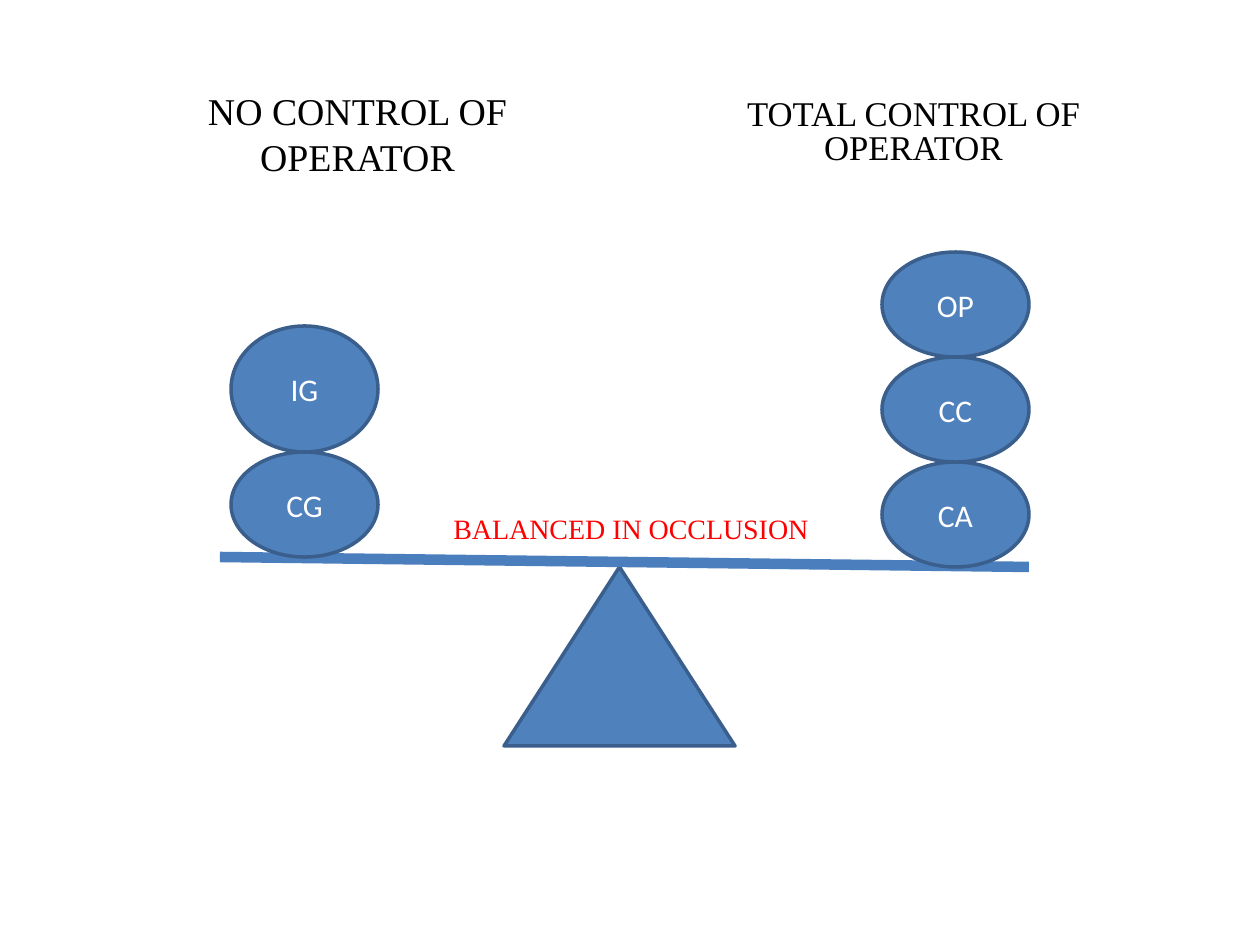
import pptx
import pptx.util
import pptx.dml.color
import pptx.enum.shapes
import pptx.enum.text
import pptx.oxml.ns
import lxml.etree

COLORS = {"fill": "4F81BD", "outline": "3A5F8C", "beam": "4B7EBC",
          "heading": "000000", "caption": "FF0000", "label": "FFFFFF"}
SERIF, SANS = "Times New Roman", "Calibri"
PX = 914400 // 126

LEFT_HEADING = ("NO CONTROL OF OPERATOR", 21.6, (116, 94, 483, 79))
RIGHT_HEADING = ("TOTAL CONTROL OF OPERATOR", 19.8, (672, 94, 483, 79))
CAPTION = ("BALANCED IN OCCLUSION", 16, (441, 505, 384, 47))
BEAM = (220, 557, 1029, 567)
FULCRUM = (504, 567, 231, 179)
WEIGHT_WIDTH = 147
STACKS = [
    {"left": 231, "base": 557, "weights": [("CG", 105), ("IG", 126)]},
    {"left": 882, "base": 567, "weights": [("CA", 105), ("CC", 105), ("OP", 105)]},
]

SHAPES = pptx.enum.shapes.MSO_SHAPE
ALIGN = pptx.enum.text.PP_ALIGN
ANCHOR = pptx.enum.text.MSO_ANCHOR


def emu(lengths):
    return [length * PX for length in lengths]


def color(name):
    return pptx.dml.color.RGBColor.from_string(COLORS[name])


def write(box, text, size, font, ink, align=ALIGN.CENTER, anchor=ANCHOR.MIDDLE, wrap=True):
    frame = box.text_frame
    frame.word_wrap = wrap
    frame.auto_size = pptx.enum.text.MSO_AUTO_SIZE.NONE
    frame.vertical_anchor = anchor
    para = frame.paragraphs[0]
    para.alignment = align
    span = para.add_run()
    span.text = text
    span.font.size = pptx.util.Pt(size)
    span.font.name = font
    span.font.color.rgb = color(ink)
    return para


def add_solid(page, kind, area):
    solid = page.shapes.add_shape(kind, *emu(area))
    solid.shadow.inherit = False
    solid.fill.solid()
    solid.fill.fore_color.rgb = color("fill")
    solid.line.color.rgb = color("outline")
    solid.line.width = pptx.util.Pt(2)
    return solid


def add_beam(page):
    beam = page.shapes.add_connector(pptx.enum.shapes.MSO_CONNECTOR.STRAIGHT, *emu(BEAM))
    beam.line.color.rgb = color("beam")
    beam.line.width = pptx.util.Pt(6)
    properties = beam._element.spPr
    lxml.etree.SubElement(properties, pptx.oxml.ns.qn("a:effectLst"))


def add_stack(page, stack):
    top = stack["base"]
    for label, height in stack["weights"]:
        top -= height
        weight = add_solid(page, SHAPES.OVAL, (stack["left"], top, WEIGHT_WIDTH, height))
        write(weight, label, 18, SANS, "label")


def main():
    deck = pptx.Presentation()
    deck.slide_width, deck.slide_height = emu((1260, 945))
    page = deck.slides.add_slide(deck.slide_layouts[5])

    text, size, area = LEFT_HEADING
    title = page.shapes.title
    title.left, title.top, title.width, title.height = emu(area)
    write(title, text, size, SERIF, "heading")

    add_solid(page, SHAPES.ISOSCELES_TRIANGLE, FULCRUM)
    add_beam(page)
    for stack in STACKS:
        add_stack(page, stack)

    text, size, area = RIGHT_HEADING
    heading = page.shapes.add_textbox(*emu(area))
    write(heading, text, size, SERIF, "heading").line_spacing = 0.8

    text, size, area = CAPTION
    caption = page.shapes.add_textbox(*emu(area))
    write(caption, text, size, SERIF, "caption", ALIGN.LEFT, ANCHOR.TOP, False)

    deck.save("out.pptx")


if __name__ == "__main__":
    main()
